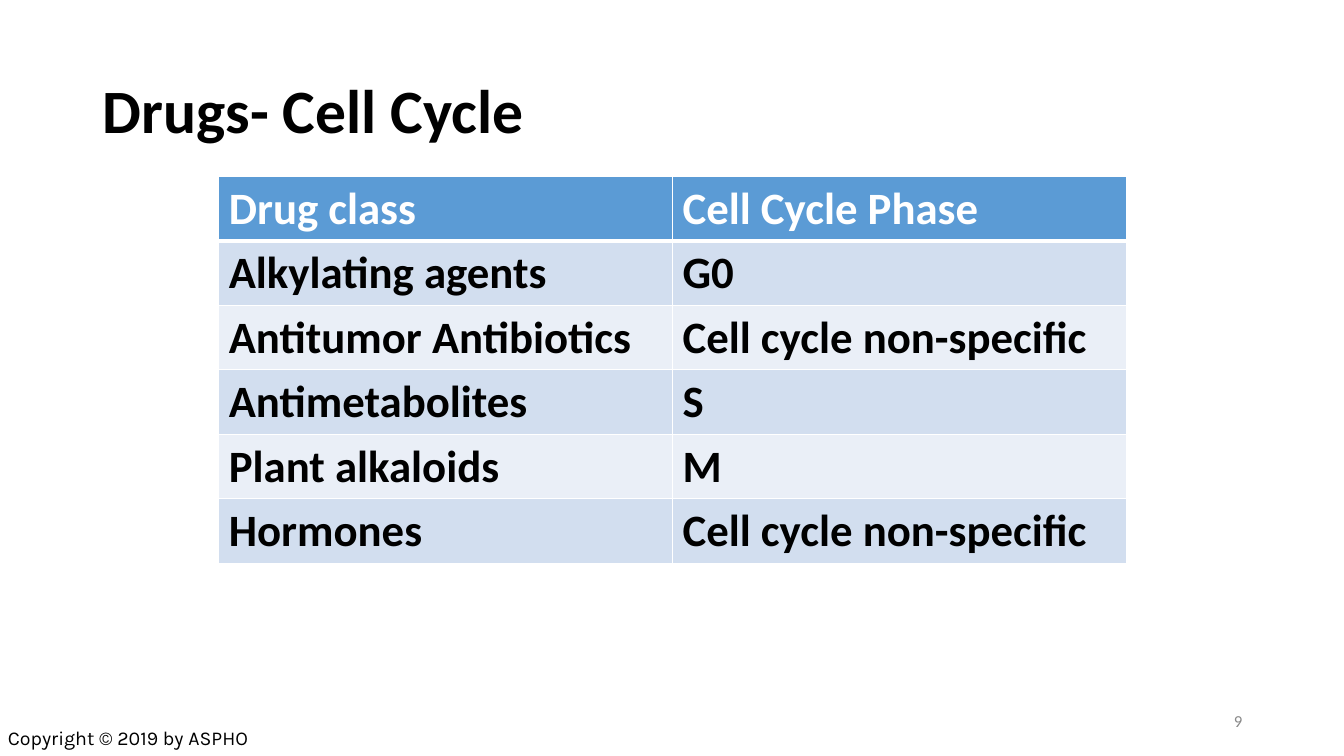
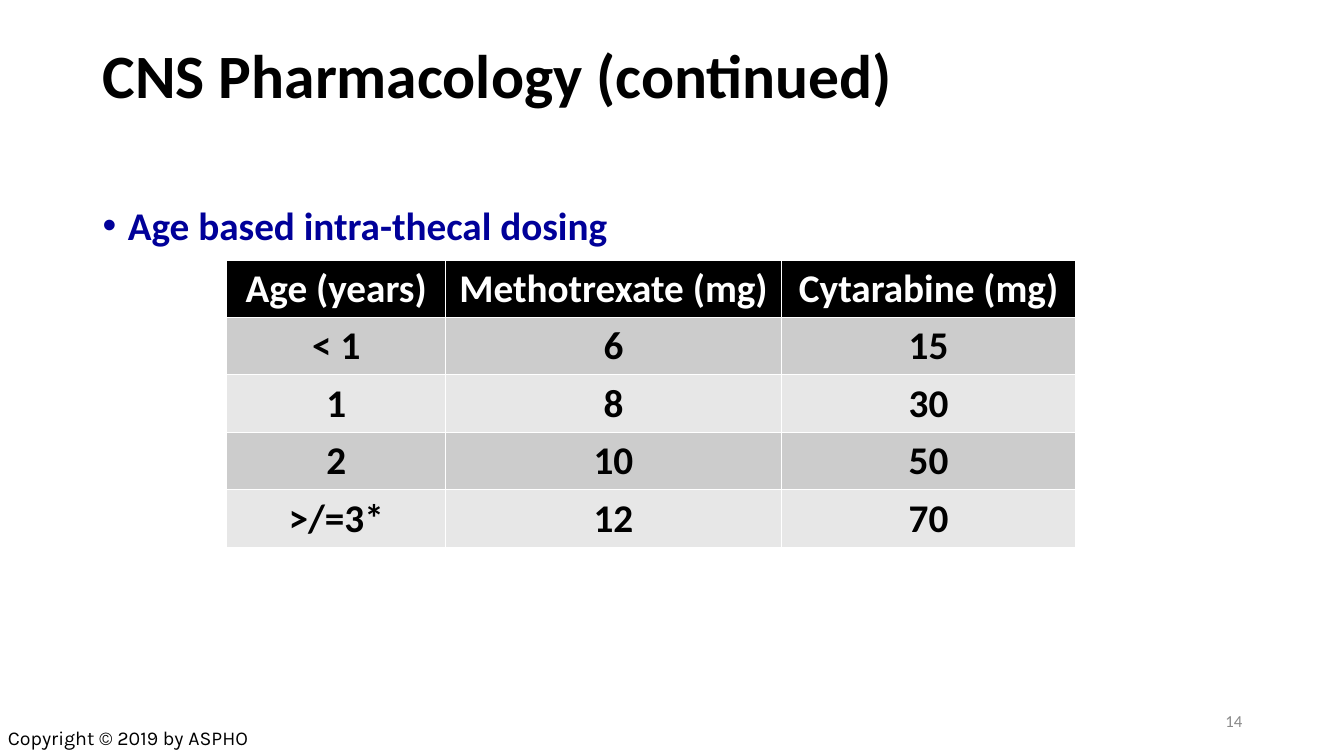
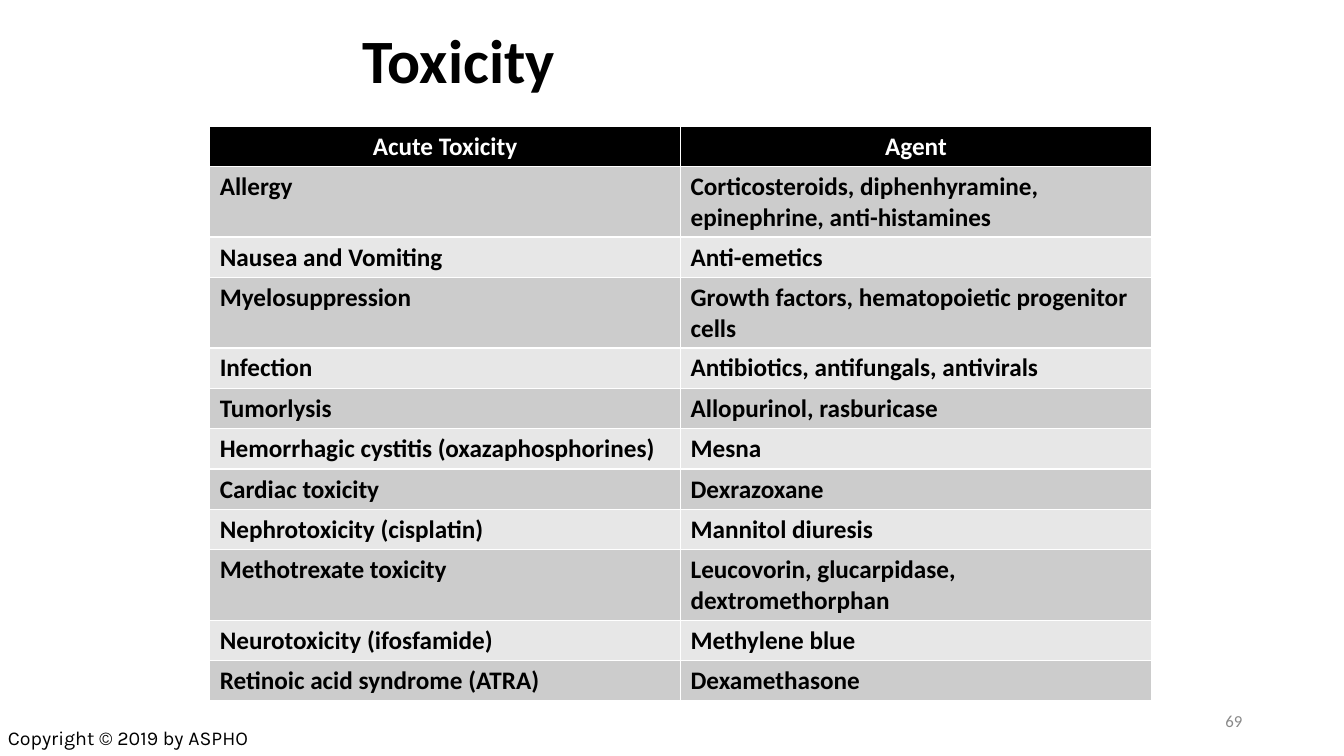
from lxml import etree
from pptx import Presentation
from pptx import util as u
from pptx.dml.color import RGBColor
from pptx.enum import text
from pptx.oxml import ns

COLORS = {
    "black": "000000", "white": "FFFFFF", "navy": "000099", "muted": "898989",
    "blue": "5B9BD5", "blue_dark": "D2DEEF", "blue_light": "EAEFF7",
    "gray_dark": "CCCCCC", "gray_light": "E7E7E7",
}
BLUE_BANDS = ("blue", "blue_dark", "blue_light")
GRAY_BANDS = ("black", "gray_dark", "gray_light")
LEFT, CENTER, RIGHT = text.PP_ALIGN.LEFT, text.PP_ALIGN.CENTER, text.PP_ALIGN.RIGHT
TOP, MIDDLE = text.MSO_ANCHOR.TOP, text.MSO_ANCHOR.MIDDLE

TITLE = {"name": "Calibri", "size": u.Pt(44), "bold": True}
BULLET = {"name": "Calibri", "size": u.Pt(28), "bold": True}
NUMBER = {"name": "Calibri", "size": u.Pt(12)}
COPYRIGHT = {"name": "Karla", "size": u.Pt(14)}
TITLE_PLACE = (0.92, 0.4, 11.5, 1.45)

slides = [
    {
        "title": "Drugs- Cell Cycle", "title_place": TITLE_PLACE, "title_anchor": MIDDLE,
        "number": "9", "bullets": [],
        "table_at": (2.17, 1.75), "columns": [4.5, 4.5], "heights": [0.64] * 6,
        "size": 32, "bands": BLUE_BANDS, "header_rule": 3,
        "header_align": LEFT, "body_align": LEFT,
        "rows": [
            ("Drug class", "Cell Cycle Phase"),
            ("Alkylating agents", "G0"),
            ("Antitumor Antibiotics", "Cell cycle non-specific"),
            ("Antimetabolites", "S"),
            ("Plant alkaloids", "M"),
            ("Hormones", "Cell cycle non-specific"),
        ],
    },
    {
        "title": "CNS Pharmacology (continued)", "title_place": TITLE_PLACE, "title_anchor": TOP,
        "number": "14", "bullets": ["Age based intra-thecal dosing"],
        "table_at": (2.25, 2.58), "columns": [2.17, 3.33, 2.92], "heights": [0.57] * 5,
        "size": 28, "bands": GRAY_BANDS, "header_rule": 1,
        "header_align": CENTER, "body_align": CENTER,
        "rows": [
            ("Age (years)", "Methotrexate (mg)", "Cytarabine (mg)"),
            ("< 1", "6", "15"),
            ("1", "8", "30"),
            ("2", "10", "50"),
            (">/=3*", "12", "70"),
        ],
    },
    {
        "title": "Toxicity", "title_place": (3.5, 0.25, 6, 0.88), "title_anchor": TOP,
        "number": "69", "bullets": [],
        "table_at": (2.08, 1.25), "columns": [4.67, 4.67], "heights": [0.4] * 12,
        "size": 18, "bands": GRAY_BANDS, "header_rule": 1,
        "header_align": CENTER, "body_align": LEFT,
        "rows": [
            ("Acute Toxicity", "Agent"),
            ("Allergy", "Corticosteroids, diphenhyramine, epinephrine, anti-histamines"),
            ("Nausea and Vomiting", "Anti-emetics"),
            ("Myelosuppression", "Growth factors, hematopoietic progenitor cells"),
            ("Infection", "Antibiotics, antifungals, antivirals"),
            ("Tumorlysis", "Allopurinol, rasburicase"),
            ("Hemorrhagic cystitis (oxazaphosphorines)", "Mesna"),
            ("Cardiac toxicity", "Dexrazoxane"),
            ("Nephrotoxicity (cisplatin)", "Mannitol diuresis"),
            ("Methotrexate toxicity", "Leucovorin, glucarpidase, dextromethorphan"),
            ("Neurotoxicity (ifosfamide)", "Methylene blue"),
            ("Retinoic acid syndrome (ATRA)", "Dexamethasone"),
        ],
    },
]


def write(paragraph, words, style, color, align=LEFT):
    paragraph.alignment = align
    span = paragraph.add_run()
    span.text = words
    for key, value in style.items():
        setattr(span.font, key, value)
    span.font.color.rgb = RGBColor.from_string(COLORS[color])


def add_text(page, place, words, style, color, align=LEFT, anchor=TOP):
    box = page.shapes.add_textbox(*map(u.Inches, place))
    box.text_frame.word_wrap = True
    box.text_frame.vertical_anchor = anchor
    paragraph = box.text_frame.paragraphs[0]
    write(paragraph, words, style, color, align)
    return paragraph


deck = Presentation()
deck.slide_width, deck.slide_height = u.Inches(13.33), u.Inches(7.5)

for slide in slides:
    page = deck.slides.add_slide(deck.slide_layouts[6])
    heading = add_text(page, slide["title_place"], slide["title"], TITLE, "black",
                       anchor=slide["title_anchor"])
    heading.line_spacing = 0.9

    for words in slide["bullets"]:
        bullet = add_text(page, (0.92, 2, 11.5, 4.76), words, BULLET, "navy")
        bullet.line_spacing = 0.9
        properties = bullet._p.get_or_add_pPr()
        properties.set("marL", str(u.Inches(0.25)))
        properties.set("indent", str(-u.Inches(0.25)))
        etree.SubElement(properties, ns.qn("a:buFont"), typeface="Arial")
        etree.SubElement(properties, ns.qn("a:buChar"), char="•")

    rows, columns, heights = slide["rows"], slide["columns"], slide["heights"]
    place = (*slide["table_at"], sum(columns), sum(heights))
    table = page.shapes.add_table(len(rows), len(columns), *map(u.Inches, place)).table
    for column, width in zip(table.columns, columns):
        column.width = u.Inches(width)
    for line, height in zip(table.rows, heights):
        line.height = u.Inches(height)

    cell_style = {"name": "Calibri", "size": u.Pt(slide["size"]), "bold": True}
    header_band, *body_bands = slide["bands"]
    for row, entries in enumerate(rows):
        header = row == 0
        band = header_band if header else body_bands[(row - 1) % 2]
        color = "white" if header else "black"
        align = slide["header_align"] if header else slide["body_align"]
        rules = {"L": 1, "R": 1, "T": 1, "B": 1}
        if row < 2:
            rules["B" if header else "T"] = slide["header_rule"]
        for column, words in enumerate(entries):
            cell = table.cell(row, column)
            write(cell.text_frame.paragraphs[0], words, cell_style, color, align)
            properties = cell._tc.get_or_add_tcPr()
            for side, width in rules.items():
                border = etree.SubElement(properties, ns.qn(f"a:ln{side}"), w=str(u.Pt(width)))
                paint = etree.SubElement(border, ns.qn("a:solidFill"))
                etree.SubElement(paint, ns.qn("a:srgbClr"), val=COLORS["white"])
            cell.fill.solid()
            cell.fill.fore_color.rgb = RGBColor.from_string(COLORS[band])

    add_text(page, (9.42, 6.95, 3, 0.4), slide["number"], NUMBER, "muted", RIGHT, MIDDLE)
    add_text(page, (-0.02, 7.15, 3.4, 0.34), "Copyright © 2019 by ASPHO", COPYRIGHT, "black")

deck.save("out.pptx")
